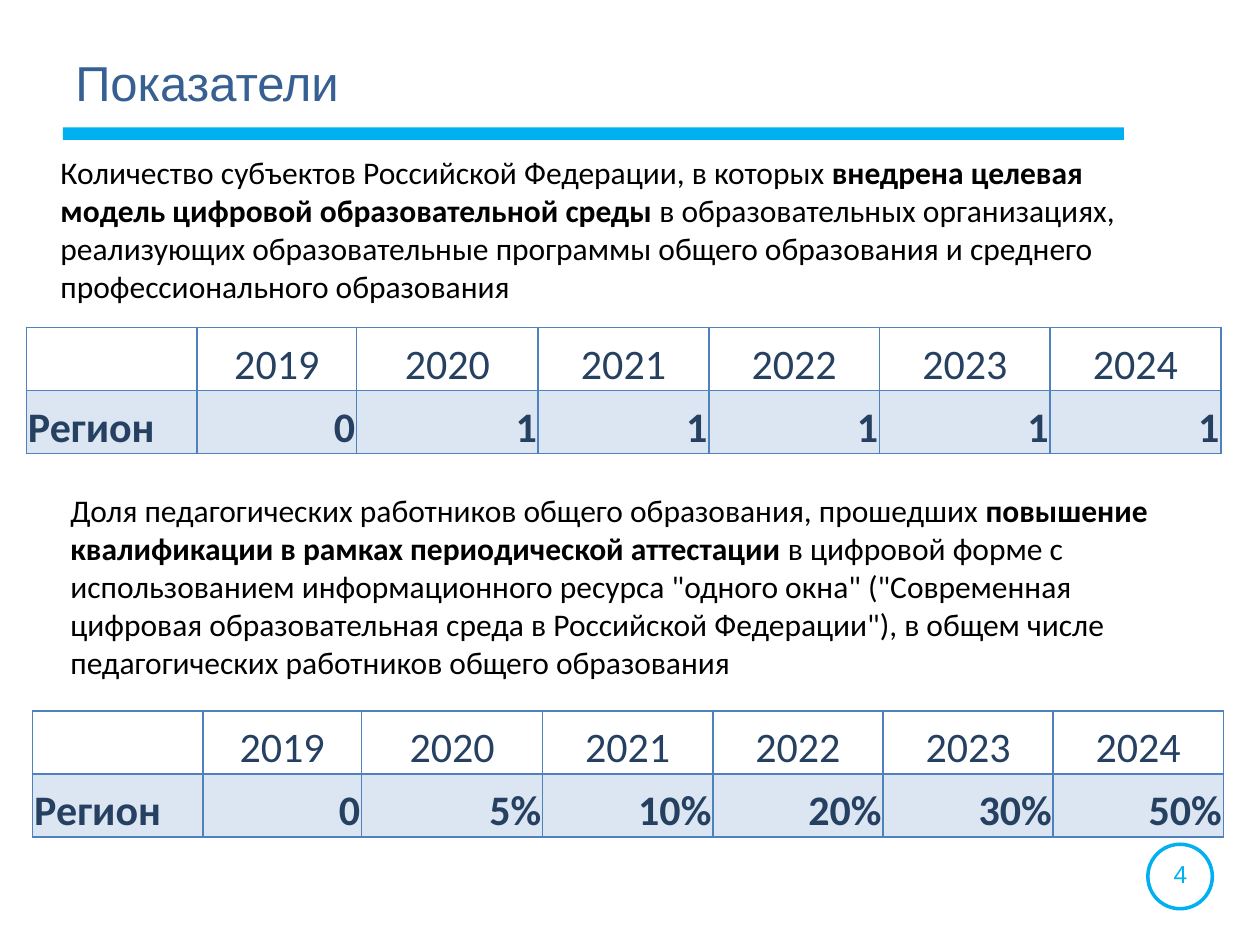
from dataclasses import dataclass

import lxml.etree
import pptx
import pptx.dml.color
import pptx.enum.shapes
import pptx.enum.text
import pptx.oxml.ns
import pptx.util
from pptx.util import Cm

Align = pptx.enum.text.PP_ALIGN
Anchor = pptx.enum.text.MSO_ANCHOR
ShapeType = pptx.enum.shapes.MSO_SHAPE

ACCENT, TITLE, BODY = "00B0F0", "376092", "000000"
TABLE_TEXT, TABLE_LINE, TABLE_FILL = "254061", "4F81BD", "DCE6F2"
YEARS = ("", "2019", "2020", "2021", "2022", "2023", "2024")
ROW_HEIGHT = 1.27


@dataclass
class Box:
    left: float
    top: float
    width: float
    height: float

    def lengths(self) -> tuple:
        return Cm(self.left), Cm(self.top), Cm(self.width), Cm(self.height)


@dataclass
class Indicator:
    text_box: Box
    runs: tuple  # plain, bold, plain
    table_left: float
    table_top: float
    columns: tuple
    values: tuple


INDICATORS = (
    Indicator(
        Box(0.97, 2.97, 23.16, 3.33),
        ("Количество субъектов Российской Федерации, в которых ",
         "внедрена целевая модель цифровой образовательной среды ",
         "в образовательных организациях, реализующих образовательные программы "
         "общего образования и среднего профессионального образования"),
        0.53, 6.6, (3.44, 3.22, 3.66) + (3.44,) * 4,
        ("0", "1", "1", "1", "1", "1")),
    Indicator(
        Box(1.17, 9.78, 23.47, 4.11),
        ("Доля педагогических работников общего образования, прошедших ",
         "повышение квалификации в рамках периодической аттестации ",
         "в цифровой форме с использованием информационного ресурса \"одного окна\" "
         "(\"Современная цифровая образовательная среда в Российской Федерации\"), "
         "в общем числе педагогических работников общего образования"),
        0.66, 14.33, (3.43, 3.2, 3.65) + (3.43,) * 4,
        ("0", "5%", "10%", "20%", "30%", "50%")),
)


def color(value: str) -> pptx.dml.color.RGBColor:
    return pptx.dml.color.RGBColor.from_string(value)


def set_font(font, name: str, size: float, value: str) -> None:
    font.name, font.size = name, pptx.util.Pt(size)
    font.color.rgb = color(value)


def add_text(slide, box: Box, runs: tuple, name: str, size: float, value: str,
             align=Align.LEFT, anchor=Anchor.TOP) -> None:
    """Every second run is bold."""
    frame = slide.shapes.add_textbox(*box.lengths()).text_frame
    frame.word_wrap = True
    frame.vertical_anchor = anchor
    paragraph = frame.paragraphs[0]
    paragraph.alignment = align
    set_font(paragraph.font, name, size, value)
    for index, text in enumerate(runs):
        run = paragraph.add_run()
        run.text = text
        if index % 2:
            run.font.bold = True


def add_plain_shape(slide, kind, box: Box):
    shape = slide.shapes.add_shape(kind, *box.lengths())
    shape.shadow.inherit = False
    return shape


def set_borders(cell, value: str, points: float) -> None:
    properties = cell._tc.get_or_add_tcPr()
    qn = pptx.oxml.ns.qn
    for index, side in enumerate(("lnL", "lnR", "lnT", "lnB")):
        line = lxml.etree.Element(qn(f"a:{side}"), w=str(pptx.util.Pt(points)))
        fill = lxml.etree.SubElement(line, qn("a:solidFill"))
        lxml.etree.SubElement(fill, qn("a:srgbClr"), val=value)
        properties.insert(index, line)


def fill_cell(cell, text: str, align, is_value_row: bool) -> None:
    if is_value_row:
        cell.fill.solid()
        cell.fill.fore_color.rgb = color(TABLE_FILL)
    else:
        cell.fill.background()
    set_borders(cell, TABLE_LINE, 1)
    cell.vertical_anchor = Anchor.BOTTOM
    cell.margin_left = cell.margin_right = cell.margin_top = Cm(0.03)
    cell.margin_bottom = 0
    cell.text = text
    paragraph = cell.text_frame.paragraphs[0]
    paragraph.alignment = align
    set_font(paragraph.font, "Calibri", 24, TABLE_TEXT)
    paragraph.font.bold = is_value_row


def add_indicator(slide, indicator: Indicator) -> None:
    add_text(slide, indicator.text_box, indicator.runs, "Calibri", 18, BODY)
    rows = (YEARS, ("Регион",) + indicator.values)
    box = Box(indicator.table_left, indicator.table_top,
              sum(indicator.columns), ROW_HEIGHT * len(rows))
    table = slide.shapes.add_table(len(rows), len(YEARS), *box.lengths()).table
    table.first_row = table.horz_banding = False
    for column, width in zip(table.columns, indicator.columns):
        column.width = Cm(width)
    for row_index, texts in enumerate(rows):
        for column_index, text in enumerate(texts):
            align = Align.RIGHT if row_index else Align.CENTER
            if column_index == 0:
                align = Align.LEFT
            fill_cell(table.cell(row_index, column_index), text, align, row_index == 1)


def main() -> None:
    presentation = pptx.Presentation()
    presentation.slide_width, presentation.slide_height = Cm(25.4), Cm(19.05)
    slide = presentation.slides.add_slide(presentation.slide_layouts[6])

    # Title and the bar under it
    bar = add_plain_shape(slide, ShapeType.RECTANGLE, Box(1.27, 2.57, 21.39, 0.25))
    bar.fill.solid()
    bar.fill.fore_color.rgb = color(ACCENT)
    bar.line.fill.background()
    add_text(slide, Box(1.27, 0.76, 21.21, 1.8), ("Показатели",), "Arial", 28, TITLE,
             anchor=Anchor.MIDDLE)

    # Page number in a ring
    ring = add_plain_shape(slide, ShapeType.OVAL, Box(23.14, 17.02, 1.3, 1.3))
    ring.fill.background()
    ring.line.color.rgb = color(ACCENT)
    ring.line.width = pptx.util.Pt(2)
    add_text(slide, Box(23.06, 17.2, 1.47, 0.86), ("4",), "Arial", 14, ACCENT,
             align=Align.CENTER)

    # Indicators: description and table
    for indicator in INDICATORS:
        add_indicator(slide, indicator)

    presentation.save("out.pptx")


if __name__ == "__main__":
    main()
